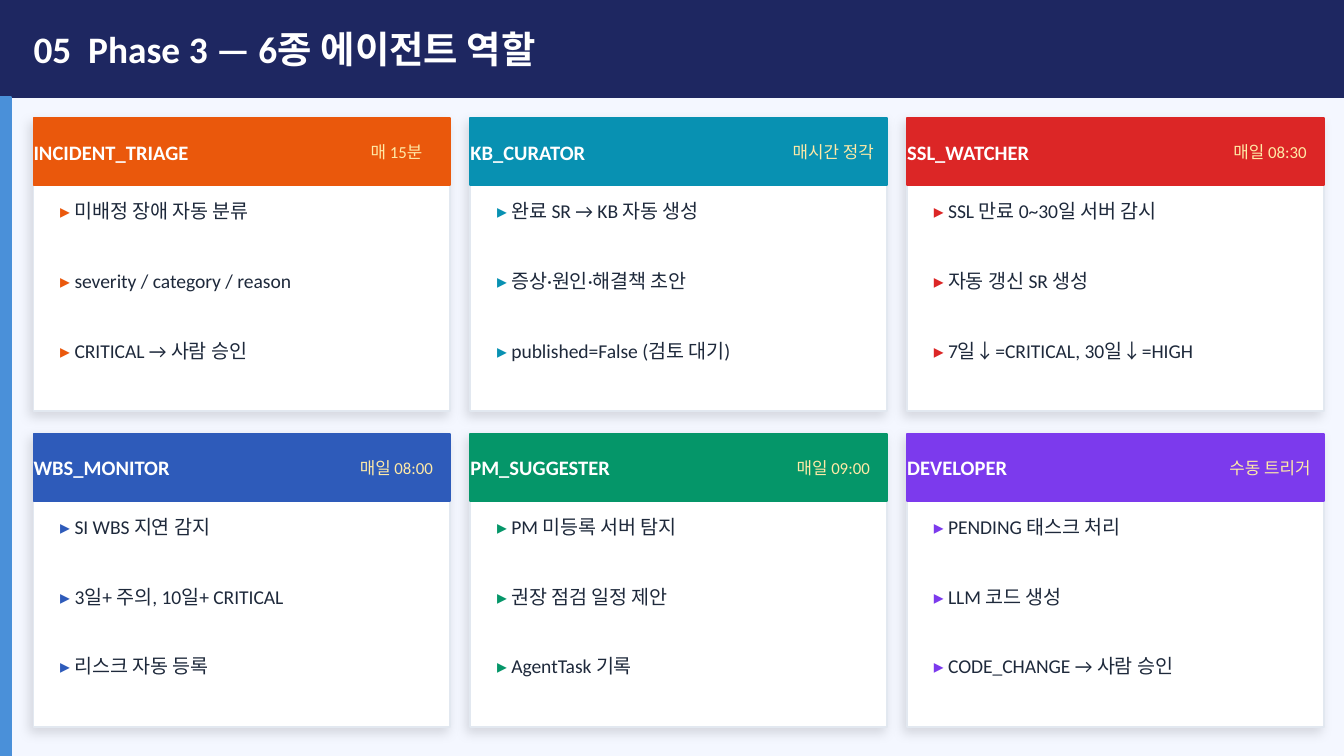
from lxml.etree import SubElement
from pptx import Presentation
from pptx.dml.color import RGBColor
from pptx.enum.shapes import MSO_SHAPE
from pptx.enum.text import MSO_ANCHOR as Anchor, PP_ALIGN as Align
from pptx.oxml.ns import qn
from pptx.util import Inches, Pt

WIDTH = 10
HEIGHT = WIDTH * 9 / 16
BANNER_HEIGHT = 0.72
COLUMNS = 3
GRID_LEFT, GRID_TOP = 0.25, 0.88
COLUMN_STEP, ROW_STEP = 3.25, 2.35
CARD_WIDTH, CARD_HEIGHT = 3.1, 2.18
HEADER_HEIGHT, NAME_WIDTH = 0.5, 2.3
DUTY_INSET, DUTY_STEP, DUTY_HEIGHT = 0.1, 0.52, 0.48
DUTY_TOP = HEADER_HEIGHT + 0.05
FONT = "Calibri"

NAVY = RGBColor(0x1E, 0x27, 0x61)
SKY = RGBColor(0x4A, 0x90, 0xD9)
PALE = RGBColor(0xF4, 0xF7, 0xFF)
WHITE = RGBColor(0xFF, 0xFF, 0xFF)
BORDER = RGBColor(0xE2, 0xE8, 0xF0)
INK = RGBColor(0x1E, 0x29, 0x3B)
CREAM = RGBColor(0xFF, 0xEA, 0xA7)
ORANGE = RGBColor(0xEA, 0x58, 0x0C)
TEAL = RGBColor(0x08, 0x91, 0xB2)
RED = RGBColor(0xDC, 0x26, 0x26)
BLUE = RGBColor(0x2E, 0x5B, 0xBA)
GREEN = RGBColor(0x05, 0x96, 0x69)
VIOLET = RGBColor(0x7C, 0x3A, 0xED)

AGENTS = [
    ("INCIDENT_TRIAGE", "매 15분", ORANGE,
     ["미배정 장애 자동 분류", "severity / category / reason", "CRITICAL → 사람 승인"]),
    ("KB_CURATOR", "매시간 정각", TEAL,
     ["완료 SR → KB 자동 생성", "증상·원인·해결책 초안", "published=False (검토 대기)"]),
    ("SSL_WATCHER", "매일 08:30", RED,
     ["SSL 만료 0~30일 서버 감시", "자동 갱신 SR 생성", "7일↓=CRITICAL, 30일↓=HIGH"]),
    ("WBS_MONITOR", "매일 08:00", BLUE,
     ["SI WBS 지연 감지", "3일+ 주의, 10일+ CRITICAL", "리스크 자동 등록"]),
    ("PM_SUGGESTER", "매일 09:00", GREEN,
     ["PM 미등록 서버 탐지", "권장 점검 일정 제안", "AgentTask 기록"]),
    ("DEVELOPER", "수동 트리거", VIOLET,
     ["PENDING 태스크 처리", "LLM 코드 생성", "CODE_CHANGE → 사람 승인"]),
]


def add_panel(page, left, top, width, height, fill, border=None):
    panel = page.shapes.add_shape(
        MSO_SHAPE.RECTANGLE, Inches(left), Inches(top), Inches(width), Inches(height))
    panel.shadow.inherit = False
    panel.fill.solid()
    panel.fill.fore_color.rgb = fill
    panel.line.color.rgb = border or fill
    panel.line.width = Pt(1)
    return panel


def add_soft_shadow(panel):
    effects = panel.element.spPr.find(qn("a:effectLst"))
    shadow = SubElement(effects, qn("a:outerShdw"), blurRad=str(Pt(6)), dist=str(Pt(3)),
                        dir=str(135 * 60000), algn="bl", rotWithShape="0")
    color = SubElement(shadow, qn("a:srgbClr"), val="000000")
    SubElement(color, qn("a:alpha"), val="12000")


def style(span, size, color, bold=False):
    span.font.name = FONT
    span.font.size = Pt(size)
    span.font.bold = bold
    span.font.color.rgb = color


def add_box(page, left, top, width, height):
    box = page.shapes.add_textbox(Inches(left), Inches(top), Inches(width), Inches(height))
    box.text_frame.word_wrap = True
    return box.text_frame


def add_label(page, left, top, width, height, text, size, color, bold=False, align=Align.LEFT):
    frame = add_box(page, left, top, width, height)
    frame.margin_left = frame.margin_right = frame.margin_top = frame.margin_bottom = 0
    frame.vertical_anchor = Anchor.MIDDLE
    frame.text = text
    para = frame.paragraphs[0]
    para.alignment = align
    style(para.runs[0], size, color, bold)


def add_duty(page, left, top, width, text, accent):
    para = add_box(page, left, top, width, DUTY_HEIGHT).paragraphs[0]
    for words, color, bold in (("▸ ", accent, True), (text, INK, False)):
        span = para.add_run()
        span.text = words
        style(span, 10.5, color, bold)


def add_agent_card(page, left, top, name, schedule, accent, duties):
    card = add_panel(page, left, top, CARD_WIDTH, CARD_HEIGHT, WHITE, BORDER)
    add_soft_shadow(card)
    add_panel(page, left, top, CARD_WIDTH, HEADER_HEIGHT, accent)
    add_label(page, left, top, NAME_WIDTH, HEADER_HEIGHT, name, 11, WHITE, bold=True)
    add_label(page, left + NAME_WIDTH, top, CARD_WIDTH - NAME_WIDTH, HEADER_HEIGHT,
              schedule, 9, CREAM, align=Align.CENTER)
    for index, duty in enumerate(duties):
        add_duty(page, left + DUTY_INSET, top + DUTY_TOP + index * DUTY_STEP,
                 CARD_WIDTH - 2 * DUTY_INSET, duty, accent)


def main():
    deck = Presentation()
    deck.slide_width, deck.slide_height = Inches(WIDTH), Inches(HEIGHT)
    page = deck.slides.add_slide(deck.slide_layouts[6])
    page.background.fill.solid()
    page.background.fill.fore_color.rgb = PALE
    add_panel(page, 0, 0, WIDTH, BANNER_HEIGHT, NAVY)
    add_panel(page, 0, BANNER_HEIGHT, 0.08, HEIGHT - BANNER_HEIGHT, SKY)
    add_label(page, GRID_LEFT, 0, WIDTH - 2 * GRID_LEFT, BANNER_HEIGHT,
              "05  Phase 3 — 6종 에이전트 역할", 20, WHITE, bold=True)
    for index, agent in enumerate(AGENTS):
        row, column = divmod(index, COLUMNS)
        add_agent_card(page, GRID_LEFT + column * COLUMN_STEP, GRID_TOP + row * ROW_STEP, *agent)
    deck.save("out.pptx")


if __name__ == "__main__":
    main()
